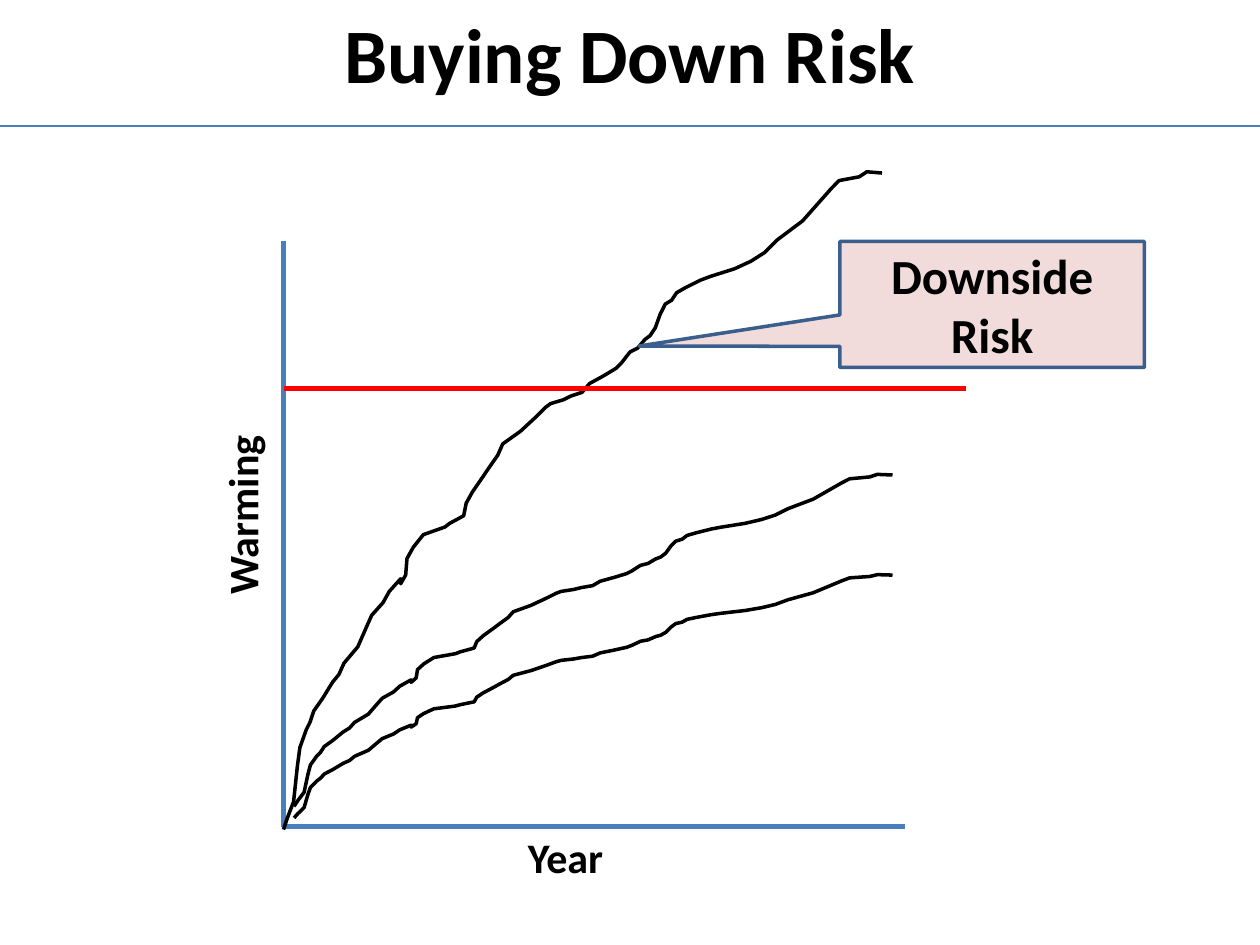
from dataclasses import dataclass

import lxml.etree
import pptx
import pptx.dml.color
import pptx.enum.shapes
import pptx.enum.text
import pptx.oxml.ns
import pptx.util

# The slide is a grid of 120 columns by 90 rows, twelve to the inch.
CELL = pptx.util.Inches(1) // 12
COLUMNS, ROWS = 120, 90
FONT = "Calibri"
BLACK, BLUE, RED = "000000", "4B7EBC", "FF0000"
PINK, DARK_BLUE = "F2DCDB", "3A5F8C"
CENTER = pptx.enum.text.PP_ALIGN.CENTER
LEFT = pptx.enum.text.PP_ALIGN.LEFT

# One warming trajectory in units of its own frame, stretched for each scenario.
FRAME_WIDTH, FRAME_HEIGHT = 475, 525
TRAJECTORY = [
    (0, 525), (3, 516), (8, 503), (11, 475), (13, 460), (18, 446), (21, 440),
    (24, 431), (31, 421), (39, 408), (44, 402), (48, 393), (59, 380), (66, 364),
    (70, 355), (79, 345), (84, 336), (93, 326), (93, 330), (97, 323), (98, 310),
    (103, 301), (111, 291), (128, 285), (132, 282), (143, 276), (145, 266),
    (150, 257), (159, 244), (163, 238), (170, 228), (174, 219), (188, 209),
    (201, 197), (208, 190), (212, 187), (222, 184), (228, 181), (237, 178),
    (243, 171), (254, 165), (264, 159), (268, 155), (275, 146), (281, 143),
    (287, 136), (291, 133), (295, 127), (299, 116), (303, 108), (308, 105),
    (312, 99), (319, 95), (331, 89), (339, 86), (358, 80), (371, 74), (382, 67),
    (392, 57), (412, 42), (435, 16), (441, 10), (457, 7), (463, 3), (475, 4),
]


@dataclass
class Box:
    left: float
    top: float
    width: float
    height: float

    def emu(self) -> list[int]:
        return [cells(v) for v in (self.left, self.top, self.width, self.height)]


@dataclass
class Label:
    text: str
    box: Box
    size: int
    align: int = LEFT
    rotation: int = 0
    wrap: bool = True


@dataclass
class Rule:
    start: tuple[float, float]
    end: tuple[float, float]
    color: str
    width: float


def cells(count: float) -> int:
    return round(count * CELL)


def rgb(color: str) -> pptx.dml.color.RGBColor:
    return pptx.dml.color.RGBColor.from_string(color)


def set_line(line, color: str, width: float) -> None:
    line.color.rgb = rgb(color)
    line.width = pptx.util.Pt(width)


def write(shape, text: str, size: int, align: int) -> None:
    paragraph = shape.text_frame.paragraphs[0]
    paragraph.text = text
    paragraph.alignment = align
    paragraph.font.name = FONT
    paragraph.font.size = pptx.util.Pt(size)
    paragraph.font.bold = True
    paragraph.font.color.rgb = rgb(BLACK)


def draw_label(shapes, label: Label) -> None:
    textbox = shapes.add_textbox(*label.box.emu())
    textbox.rotation = label.rotation
    textbox.text_frame.word_wrap = label.wrap
    textbox.text_frame.vertical_anchor = pptx.enum.text.MSO_ANCHOR.MIDDLE
    write(textbox, label.text, label.size, label.align)


def draw_rule(shapes, rule: Rule) -> None:
    connector = shapes.add_connector(
        pptx.enum.shapes.MSO_CONNECTOR.STRAIGHT,
        *(cells(v) for v in rule.start + rule.end),
    )
    set_line(connector.line, rule.color, rule.width)
    lxml.etree.SubElement(
        connector._element.spPr, pptx.oxml.ns.qn("a:effectLst")
    )


def draw_trajectory(shapes, frame: Box) -> None:
    left, top, width, height = frame.emu()
    builder = shapes.build_freeform(
        *TRAJECTORY[0], scale=(width / FRAME_WIDTH, height / FRAME_HEIGHT)
    )
    builder.add_line_segments(TRAJECTORY[1:], close=False)
    curve = builder.convert_to_shape(left, top)
    curve.shadow.inherit = False
    curve.fill.background()
    set_line(curve.line, BLACK, 2)


def draw_callout(shapes, text: str, box: Box) -> None:
    callout = shapes.add_shape(
        pptx.enum.shapes.MSO_SHAPE.RECTANGULAR_CALLOUT, *box.emu()
    )
    callout.adjustments[0] = -1.16
    callout.adjustments[1] = 0.33
    callout.shadow.inherit = False
    callout.fill.solid()
    callout.fill.fore_color.rgb = rgb(PINK)
    set_line(callout.line, DARK_BLUE, 2)
    callout.text_frame.word_wrap = True
    callout.text_frame.vertical_anchor = pptx.enum.text.MSO_ANCHOR.MIDDLE
    write(callout, text, 28, CENTER)


LABELS = [
    Label("Buying Down Risk", Box(6, 0, 108, 10), 44, CENTER),
    Label("Year", Box(49.1, 78.6, 10.3, 6), 24, wrap=False),
    Label("Warming", Box(11.6, 43.4, 22.8, 6), 24, rotation=270),
]
ORIGIN = (27, 78.75)
AXES = [
    Rule((27, 23), ORIGIN, BLUE, 3),
    Rule(ORIGIN, (86.2, 78.75), BLUE, 3),
]
SCENARIOS = [
    Box(28, 54.6, 57, 23.3),
    Box(27, 16, 57, 63),
    Box(28, 45, 57, 31.8),
]
THRESHOLD = Rule((27, 37), (92, 37), RED, 2.75)
TITLE_RULE = Rule((0, 12), (COLUMNS, 12), BLUE, 0.75)


def main() -> None:
    deck = pptx.Presentation()
    deck.slide_width = cells(COLUMNS)
    deck.slide_height = cells(ROWS)
    shapes = deck.slides.add_slide(deck.slide_layouts[6]).shapes

    # Title and axis names
    for label in LABELS:
        draw_label(shapes, label)
    # Chart axes and warming scenarios
    for axis in AXES:
        draw_rule(shapes, axis)
    for scenario in SCENARIOS:
        draw_trajectory(shapes, scenario)
    # Risk threshold and its callout
    draw_rule(shapes, THRESHOLD)
    draw_callout(shapes, "Downside Risk", Box(80, 23, 29, 12))
    # Line under the title
    draw_rule(shapes, TITLE_RULE)

    deck.save("out.pptx")


if __name__ == "__main__":
    main()
